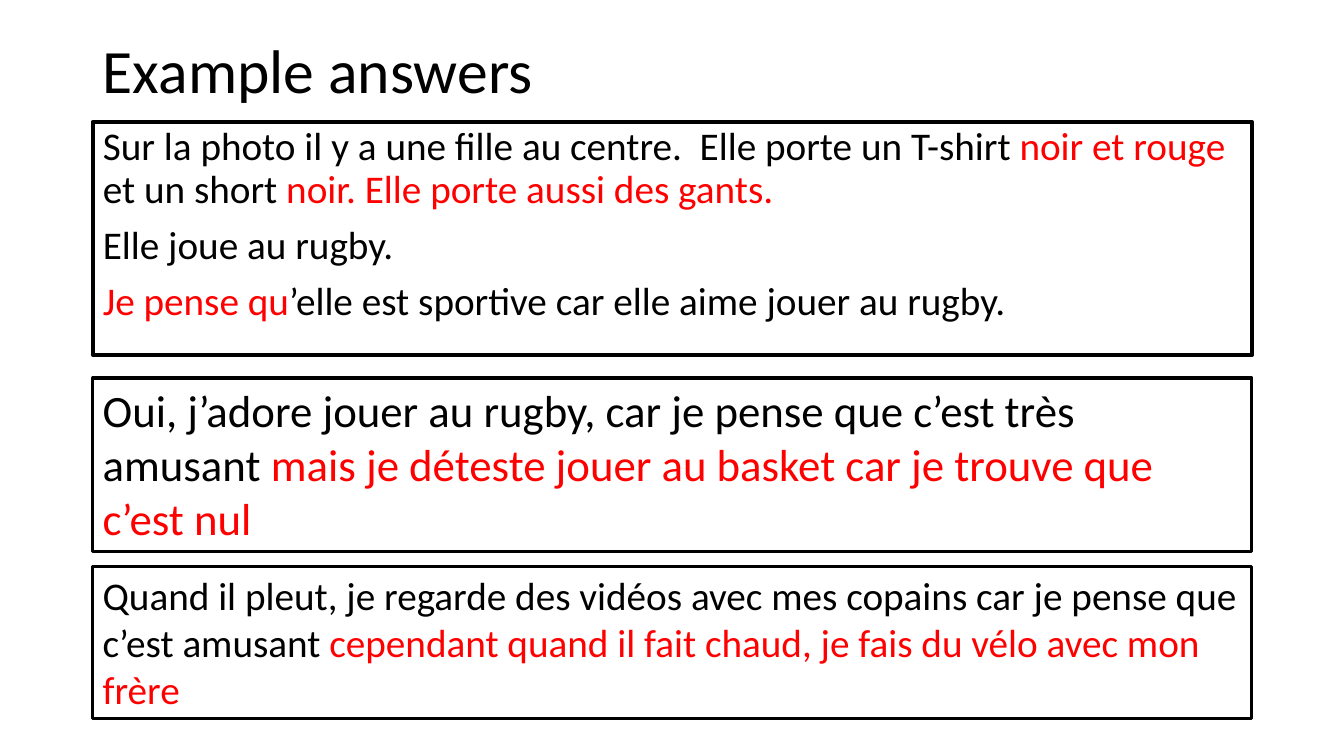
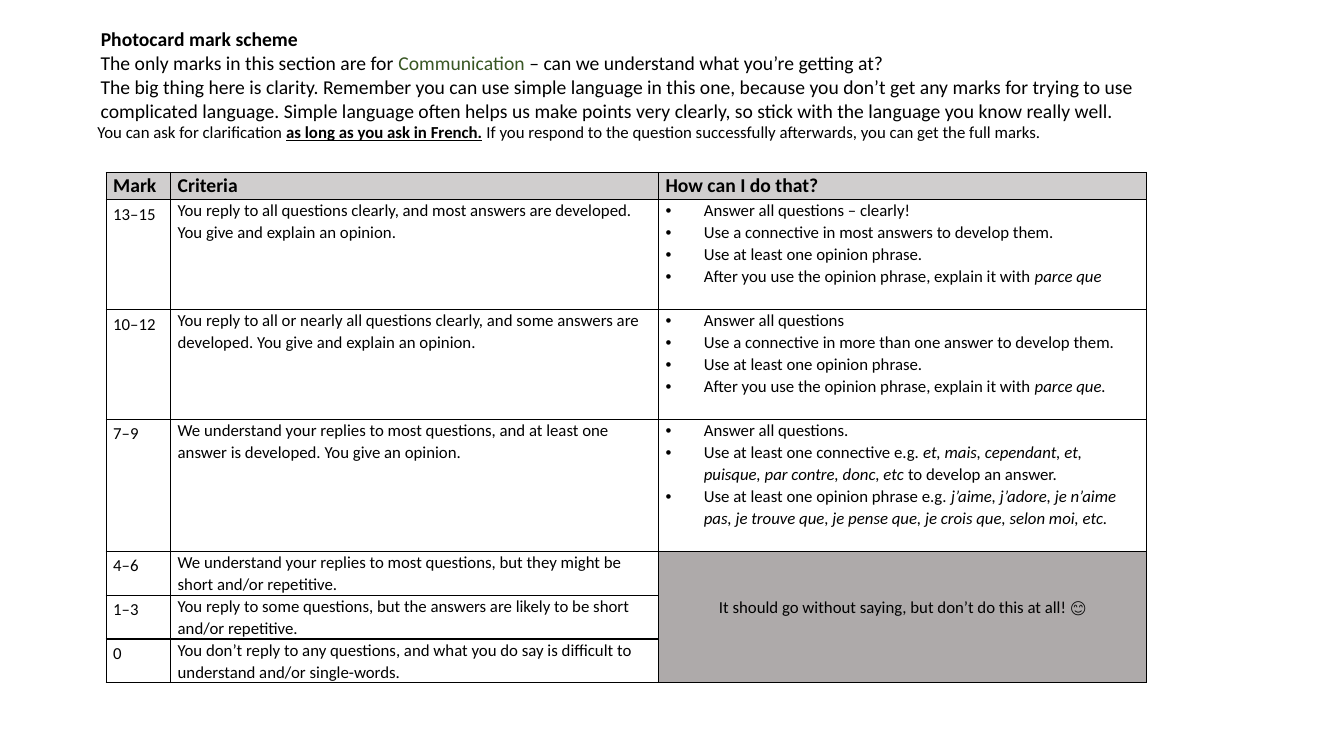
from lxml.etree import SubElement
from pptx import Presentation
from pptx.dml.color import RGBColor
from pptx.enum.text import MSO_ANCHOR, MSO_AUTO_SIZE, PP_ALIGN
from pptx.oxml.ns import qn
from pptx.util import Inches, Pt

SLIDE_WIDTH, SLIDE_HEIGHT = Inches(13.33), Inches(7.5)
COLUMN, ROW = SLIDE_WIDTH / 100, SLIDE_HEIGHT / 75
FONT = "Calibri"
BLACK, WHITE, RED, GREEN = "000000", "FFFFFF", "FF0000", "385623"
HEADER_GREY, WARNING_GREY = "D0CECE", "AEAAAA"
TITLE_LAYOUT, CONTENT_LAYOUT = 5, 1
INSET = (Inches(0.1), Inches(0.05), Inches(0.1), Inches(0.05))
CELL_MARGIN = Pt(5)

ANSWERS = [
    [
        [("Sur la photo il y a une fille au centre.  Elle porte un T-shirt ",),
         ("noir et rouge ", RED), ("et un short ",),
         ("noir. Elle porte aussi des gants.", RED)],
        [("Elle joue au rugby.",)],
        [("Je pense qu", RED),
         ("’elle est sportive car elle aime jouer au rugby.",)],
    ],
    [[("Oui, j’adore jouer au rugby, car je pense que c’est très amusant ",),
      ("mais je déteste jouer au basket car je trouve que c’est nul", RED)]],
    [[("Quand il pleut, je regarde des vidéos avec mes copains car je pense "
       "que c’est amusant ",),
      ("cependant quand il fait chaud, je fais du vélo avec mon frère", RED)]],
]

INTRODUCTION = [
    [("The only marks in this section are for ",), ("Communication ", GREEN),
     ("– can we understand what you’re getting at?",)],
    [("The big thing here is clarity. Remember you can use simple language in "
      "this one, because you don’t get any marks for trying to use complicated "
      "language. Simple language often helps us make points very clearly, so "
      "stick with the language you know really well.",)],
]
CLARIFICATION = [
    [("You can ask for clarification ",),
     ("as long as you ask in French.", BLACK, "bold underline"),
     (" If you respond to the question successfully afterwards, you can get "
      "the full marks.",)],
]

HEADINGS = ["Mark", "Criteria", "How can I do that?"]
CRITERIA = [
    ("13–15", "You reply to all questions clearly, and most answers are "
              "developed. You give and explain an opinion."),
    ("10–12", "You reply to all or nearly all questions clearly, and some "
              "answers are developed. You give and explain an opinion."),
    ("7–9", "We understand your replies to most questions, and at least one "
            "answer is developed. You give an opinion."),
    ("4–6", "We understand your replies to most questions, but they might be "
            "short and/or repetitive."),
    ("1–3", "You reply to some questions, but the answers are likely to be "
            "short and/or repetitive."),
    ("0", "You don’t reply to any questions, and what you do say is difficult "
          "to understand and/or single-words."),
]
ADVICE = [
    [
        [("Answer all questions – clearly!",)],
        [("Use a connective in most answers to develop them.",)],
        [("Use at least one opinion phrase.",)],
        [("After you use the opinion phrase, explain it with ",),
         ("parce que", BLACK, "italic")],
    ],
    [
        [("Answer all questions",)],
        [("Use a connective in more than one answer to develop them.",)],
        [("Use at least one opinion phrase.",)],
        [("After you use the opinion phrase, explain it with ",),
         ("parce que.", BLACK, "italic")],
    ],
    [
        [("Answer all questions.",)],
        [("Use at least one connective e.g. ",),
         ("et, mais, cependant, et, puisque, par contre, donc, etc", BLACK,
          "italic"),
         (" to develop an answer.",)],
        [("Use at least one opinion phrase e.g. ",),
         ("j’aime, j’adore, je n’aime pas, je trouve que, je pense que, "
          "je crois que, selon moi, etc.", BLACK, "italic")],
    ],
]
WARNING = [[("It should go without saying, but don’t do this at all! ",),
            ("😊", BLACK, "", "Lato")]]


def color(hex_string):
    return RGBColor.from_string(hex_string)


def place(shape, box):
    """Put a shape at a box of (left, top, width, height) in grid units."""
    left, top, width, height = box
    shape.left, shape.width = round(left * COLUMN), round(width * COLUMN)
    shape.top, shape.height = round(top * ROW), round(height * ROW)


def write(frame, paragraphs, size, spacing=1.0, before=0, bold=False,
          align=PP_ALIGN.LEFT):
    """Fill a text frame; each run is (text, colour, emphasis, font)."""
    for index, runs in enumerate(paragraphs):
        paragraph = frame.paragraphs[0] if index == 0 else frame.add_paragraph()
        paragraph.alignment = align
        paragraph.line_spacing = spacing
        paragraph.space_before, paragraph.space_after = Pt(before), Pt(0)
        paragraph.font.size, paragraph.font.bold = Pt(size), bold
        for text, *style in runs:
            hex_string, emphasis, font = style + [BLACK, "", FONT][len(style):]
            run = paragraph.add_run()
            run.text = text
            run.font.name = font
            run.font.color.rgb = color(hex_string)
            for name in emphasis.split():
                setattr(run.font, name, True)


def set_list(paragraph, indent=0, bullet=None):
    properties = paragraph._p.get_or_add_pPr()
    properties.set("marL", str(indent))
    properties.set("indent", str(-indent))
    if bullet:
        SubElement(properties, qn("a:buFont"), typeface="Arial")
        SubElement(properties, qn("a:buChar"), char=bullet)
    else:
        SubElement(properties, qn("a:buNone"))


def set_frame(shape, anchor=MSO_ANCHOR.TOP, inset=INSET):
    frame = shape.text_frame
    frame.word_wrap, frame.auto_size = True, MSO_AUTO_SIZE.NONE
    frame.vertical_anchor = anchor
    (frame.margin_left, frame.margin_top,
     frame.margin_right, frame.margin_bottom) = inset
    return frame


def add_title(slide, box, text, size, bold=False, spacing=1.0,
              anchor=MSO_ANCHOR.MIDDLE, inset=INSET):
    place(slide.shapes.title, box)
    frame = set_frame(slide.shapes.title, anchor, inset)
    write(frame, [[(text,)]], size, spacing, bold=bold)


def add_text(slide, box, paragraphs, size, inset=INSET):
    shape = slide.shapes.add_textbox(0, 0, 0, 0)
    place(shape, box)
    write(set_frame(shape, inset=inset), paragraphs, size)
    return shape


def outline(shape, width):
    shape.line.color.rgb = color(BLACK)
    shape.line.width = Pt(width)


def add_answers_slide(presentation):
    slide = presentation.slides.add_slide(
        presentation.slide_layouts[CONTENT_LAYOUT])
    left, width = 6.9, 86.25
    add_title(slide, (left, 0, width, 14.5), "Example answers", 44, spacing=0.9)

    photo_answer = slide.placeholders[1]
    place(photo_answer, (left, 12.1, width, 23.1))
    frame = set_frame(photo_answer)
    write(frame, ANSWERS[0], 28, spacing=0.9, before=10)
    for paragraph in frame.paragraphs:
        set_list(paragraph)
    outline(photo_answer, 3)

    for answer, top, height, size in zip(ANSWERS[1:], (37.5, 56.2),
                                         (17.2, 15.1), (32, 28)):
        outline(add_text(slide, (left, top, width, height), answer, size), 2.25)


def format_cell(cell, fill=None):
    """Draw black borders on a cell and set its margins and fill."""
    properties = cell._tc.get_or_add_tcPr()
    for side in "LRTB":
        line = SubElement(properties, qn(f"a:ln{side}"), w=str(Pt(1)))
        solid = SubElement(line, qn("a:solidFill"))
        SubElement(solid, qn("a:srgbClr"), val=BLACK)
    cell.margin_left = cell.margin_right = CELL_MARGIN
    cell.margin_top = cell.margin_bottom = 0
    if fill:
        cell.fill.solid()
        cell.fill.fore_color.rgb = color(fill)
    else:
        cell.fill.background()


def add_mark_table(slide, left, top):
    widths = (4.8, 36.3, 36.3)
    heights = (2.7, 10.9, 10.9, 13.1, 4.35, 4.35, 4.35)
    frame = slide.shapes.add_table(len(heights), len(widths), 0, 0, 1, 1)
    place(frame, (left, top, sum(widths), sum(heights)))
    table = frame.table
    for column, width in zip(table.columns, widths):
        column.width = round(width * COLUMN)
    for row, height in zip(table.rows, heights):
        row.height = round(height * ROW)

    first_warning = len(ADVICE) + 1
    for row_index in range(len(heights)):
        for column_index in range(len(widths)):
            fill = None
            if row_index == 0:
                fill = HEADER_GREY
            elif row_index >= first_warning and column_index == 2:
                fill = WARNING_GREY
            format_cell(table.cell(row_index, column_index), fill)

    for column_index, heading in enumerate(HEADINGS):
        write(table.cell(0, column_index).text_frame, [[(heading,)]], 14,
              Pt(18), bold=True)
    for row_index, (mark, criterion) in enumerate(CRITERIA, 1):
        write(table.cell(row_index, 0).text_frame, [[(mark,)]], 12, Pt(18))
        write(table.cell(row_index, 1).text_frame, [[(criterion,)]], 12, 1.07)
    for row_index, advice in enumerate(ADVICE, 1):
        text_frame = table.cell(row_index, 2).text_frame
        write(text_frame, advice, 12, 1.07)
        for paragraph in text_frame.paragraphs:
            set_list(paragraph, Inches(0.38), "•")

    warning = table.cell(first_warning, 2)
    warning.merge(table.cell(len(heights) - 1, 2))
    warning.margin_top = round(heights[-1] * ROW)
    write(warning.text_frame, WARNING, 12, 1.07, align=PP_ALIGN.CENTER)


def add_mark_scheme_slide(presentation):
    slide = presentation.slides.add_slide(
        presentation.slide_layouts[TITLE_LAYOUT])
    side = INSET[0]
    left, width = 6.75, 85
    add_mark_table(slide, 7.9, 17.1)
    add_title(slide, (left, 2.2, width, 2.9), "Photocard mark scheme", 14,
              bold=True, anchor=MSO_ANCHOR.TOP, inset=(side, INSET[1], side, 0))
    add_text(slide, (left, 5.1, width, 7), INTRODUCTION, 14,
             inset=(side, 0, side, 0))
    clarification = add_text(slide, (1.65, 12.1, 98.35, 4.9), CLARIFICATION, 12,
                             inset=(round(5.6 * COLUMN), 0, 0, 0))
    clarification.fill.solid()
    clarification.fill.fore_color.rgb = color(WHITE)


def main():
    presentation = Presentation()
    presentation.slide_width = SLIDE_WIDTH
    presentation.slide_height = SLIDE_HEIGHT
    add_answers_slide(presentation)
    add_mark_scheme_slide(presentation)
    presentation.save("out.pptx")


if __name__ == "__main__":
    main()
